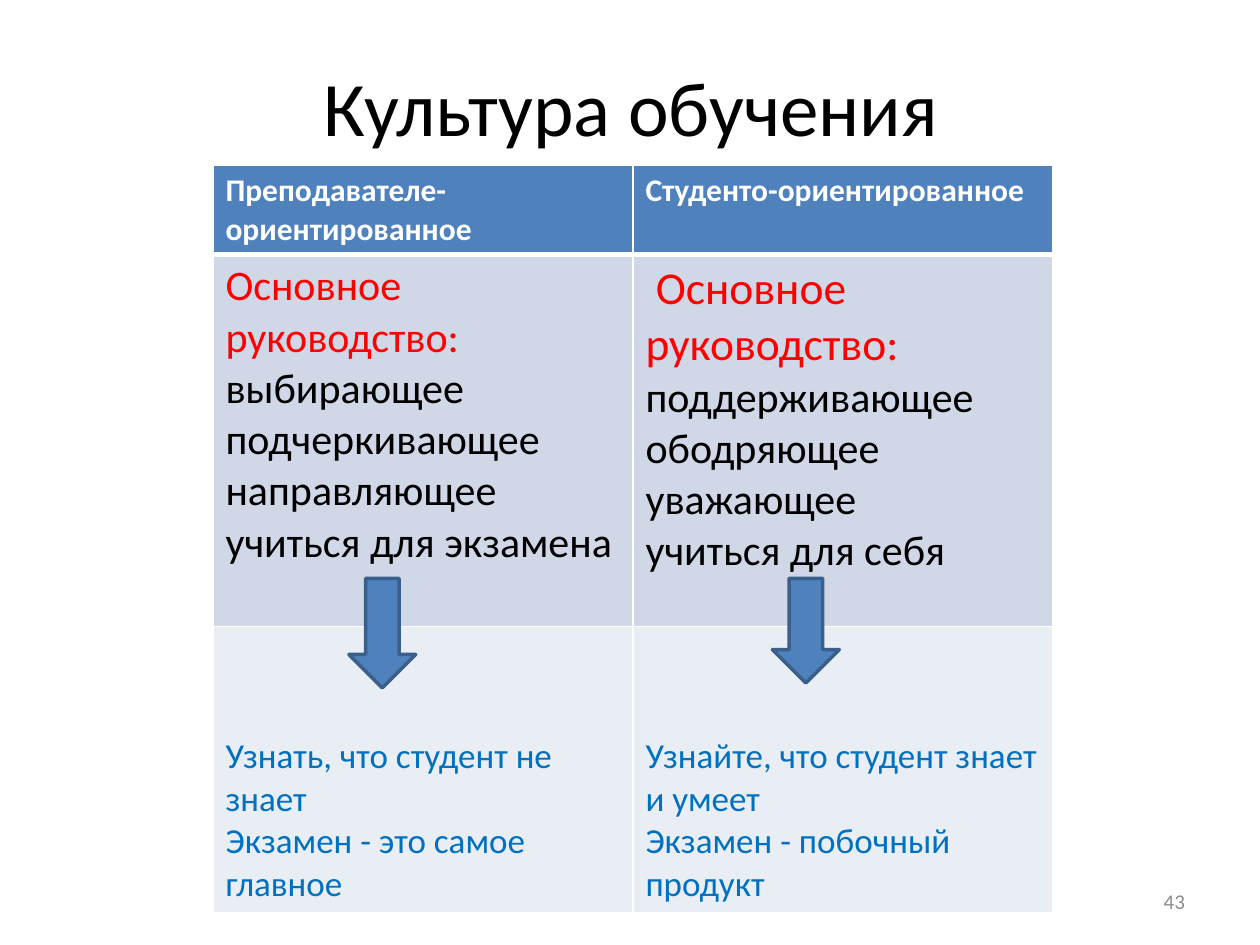
"""Build a slide comparing teacher-centred and student-centred learning cultures."""
from dataclasses import dataclass

import lxml.etree
import pptx
import pptx.dml.color
import pptx.enum.shapes
import pptx.enum.text
import pptx.oxml.ns
import pptx.util

Pt = pptx.util.Pt
Align = pptx.enum.text.PP_ALIGN
Anchor = pptx.enum.text.MSO_ANCHOR
qn = pptx.oxml.ns.qn


@dataclass(frozen=True)
class Theme:
    """Hold the colours, font and type sizes."""
    font: str = "Calibri"
    black: str = "000000"
    white: str = "FFFFFF"
    red: str = "FF0000"
    blue: str = "0070C0"
    grey: str = "8C8C8C"
    accent: str = "4F81BD"
    outline: str = "3A5F8C"
    band_dark: str = "D0D8E8"
    band_light: str = "E9EDF4"
    title: int = 44
    lead: int = 26
    body: int = 24
    result: int = 20
    header: int = 18
    number: int = 12


THEME = Theme()


def colour(value):
    """Turn a hex string into a colour."""
    return pptx.dml.color.RGBColor.from_string(value)


def apply(target, formats):
    """Set each attribute named in a dict of format values."""
    for name, value in formats.items():
        setattr(target, name, value)


def style(size, hue, bold=False):
    """Return the format of a span."""
    return {"name": THEME.font, "size": Pt(size), "bold": bold, "color": hue}


def write(frame, paragraphs, align=Align.LEFT):
    """Fill a text frame with paragraphs, each a list of (text, format) spans."""
    for index, spans in enumerate(paragraphs):
        para = frame.paragraphs[0] if index == 0 else frame.add_paragraph()
        para.alignment = align
        for text, formats in spans:
            span = para.add_run()
            span.text = text
            fonts = dict(formats)
            span.font.color.rgb = colour(fonts.pop("color"))
            apply(span.font, fonts)


def add_text(page, place, text, formats, align):
    """Add a vertically centred text box with one line."""
    box = page.shapes.add_textbox(*map(Pt, place))
    apply(box.text_frame, {"word_wrap": True, "vertical_anchor": Anchor.MIDDLE})
    write(box.text_frame, [[(text, formats)]], align)


def add_arrow(page, place):
    """Add a block arrow pointing down."""
    arrow = page.shapes.add_shape(
        pptx.enum.shapes.MSO_SHAPE.DOWN_ARROW, *map(Pt, place))
    arrow.shadow.inherit = False
    arrow.fill.solid()
    arrow.fill.fore_color.rgb = colour(THEME.accent)
    arrow.line.color.rgb = colour(THEME.outline)
    arrow.line.width = Pt(2)


def add_borders(cell, widths):
    """Draw white cell borders with the given widths by side."""
    properties = cell._tc.get_or_add_tcPr()
    for index, (side, width) in enumerate(widths.items()):
        line = lxml.etree.Element(qn(f"a:ln{side}"), w=str(Pt(width)))
        fill = lxml.etree.SubElement(line, qn("a:solidFill"))
        lxml.etree.SubElement(fill, qn("a:srgbClr"), val=THEME.white)
        properties.insert(index, line)


def add_table(page, place, heights, rows, fills, anchors):
    """Add a table whose rows each have a height, fill and anchor."""
    table = page.shapes.add_table(
        len(rows), len(rows[0]), *map(Pt, place), Pt(sum(heights))).table
    for index, row in enumerate(rows):
        table.rows[index].height = Pt(heights[index])
        for column, paragraphs in enumerate(row):
            cell = table.cell(index, column)
            cell.fill.solid()
            cell.fill.fore_color.rgb = colour(fills[index])
            cell.vertical_anchor = anchors[index]
            add_borders(cell, {"L": 1, "R": 1, "T": 3 if index == 1 else 1,
                               "B": 3 if index == 0 else 1})
            write(cell.text_frame, paragraphs)


def culture_rows():
    """Return the wording of the table by row and column."""
    header = style(THEME.header, THEME.white, True)
    body = style(THEME.body, THEME.black)
    result = style(THEME.result, THEME.blue)
    return [
        [[[("Преподавателе-ориентированное", header)]],
         [[("Студенто-ориентированное", header)]]],
        [[[("Основное руководство: ", style(THEME.body, THEME.red)),
           ("выбирающее", body)],
          [("подчеркивающее", body)],
          [("направляющее", body)],
          [("учиться для экзамена", body)]],
         [[(" Основное руководство:", style(THEME.lead, THEME.red))],
          [("поддерживающее ободряющее уважающее", body)],
          [("учиться для себя", body)]]],
        [[[("Узнать, что студент не знает", result)],
          [("Экзамен - это самое главное", result)]],
         [[("Узнайте, что студент знает и умеет", result)],
          [("Экзамен - побочный продукт", result)]]],
    ]


def main():
    """Build and save the deck."""
    deck = pptx.Presentation()
    apply(deck, {"slide_width": Pt(720), "slide_height": Pt(540)})
    page = deck.slides.add_slide(deck.slide_layouts[6])
    add_text(page, (36.7, 15.1, 648, 90), "Культура обучения",
             style(THEME.title, THEME.black), Align.CENTER)
    add_table(page, (121.7, 94.5, 480), (51, 212.5, 163.5), culture_rows(),
              (THEME.accent, THEME.band_dark, THEME.band_light),
              (Anchor.TOP, Anchor.TOP, Anchor.BOTTOM))
    for left, height in ((199.4, 62.6), (441.4, 59.8)):
        add_arrow(page, (left, 330.5, 38.2, height))
    add_text(page, (516.2, 500.4, 168, 28.8), "43",
             style(THEME.number, THEME.grey), Align.RIGHT)
    deck.save("out.pptx")


if __name__ == "__main__":
    main()
